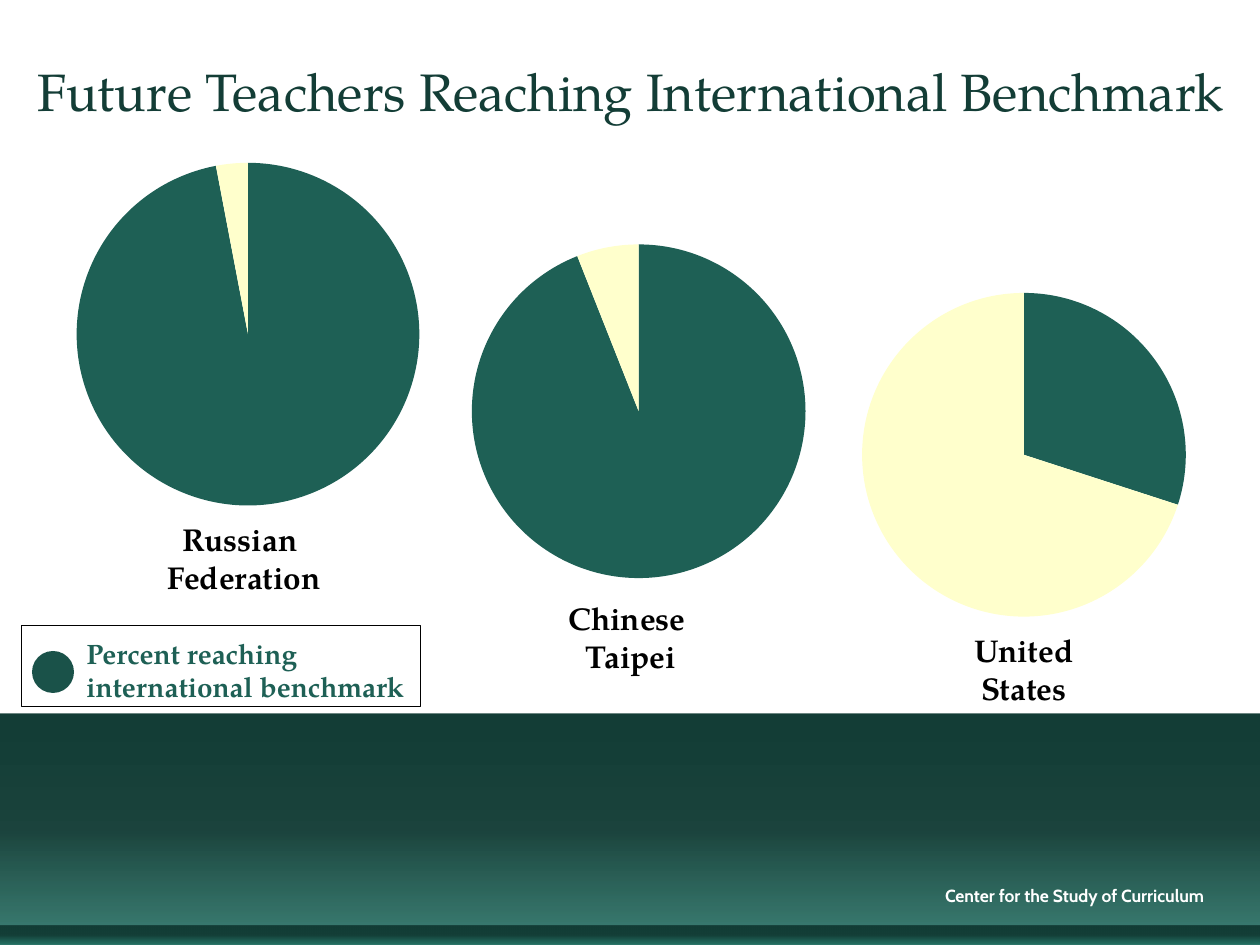
from lxml import etree
from pptx import Presentation
from pptx.chart.data import CategoryChartData
from pptx.dml.color import RGBColor
from pptx.enum.chart import XL_CHART_TYPE as ChartType
from pptx.enum.shapes import MSO_SHAPE as Shape
from pptx.enum.text import PP_ALIGN as Align
from pptx.oxml import parse_xml
from pptx.util import Emu, Pt

SCALE = 914400 / 126
SERIF = "TeX Gyre Pagella"
DRAWING_NS = "http://schemas.openxmlformats.org/drawingml/2006/main"
CHART_NS = "http://schemas.openxmlformats.org/drawingml/2006/chart"
COLORS = {
    "dark": "133D36",
    "light": "237164",
    "reached": "1E6055",
    "not_reached": "FFFFCC",
    "marker": "1A5249",
    "black": "000000",
    "white": "FFFFFF",
}


def px(*lengths):
    return [Emu(round(length * SCALE)) for length in lengths]


def add_text(box, text, color, size, font=SERIF, bold=True, align=Align.CENTER):
    """Add a wrapped text box; newlines in text start paragraphs, \\v breaks a line."""
    frame = slide.shapes.add_textbox(*px(*box)).text_frame
    frame.word_wrap = True
    frame.text = text
    style = {"name": font, "size": Pt(size), "bold": bold}
    for paragraph in frame.paragraphs:
        paragraph.alignment = align
        for run in paragraph.runs:
            for name, value in style.items():
                setattr(run.font, name, value)
            run.font.color.rgb = RGBColor.from_string(COLORS[color])


presentation = Presentation()
presentation.slide_width, presentation.slide_height = px(1260, 945)
slide = presentation.slides.add_slide(presentation.slide_layouts[6])

# Footer band and the strip along its lower edge
gradient_stops = [(0, "dark", 100), (50, "dark", 96), (100, "light", 87)]
stops_xml = "".join(
    f'<a:gs pos="{position * 1000}"><a:srgbClr val="{COLORS[color]}">'
    f'<a:alpha val="{opacity * 1000}"/></a:srgbClr></a:gs>'
    for position, color, opacity in gradient_stops
)
for top, height in [(714, 231), (926, 19)]:
    band = slide.shapes.add_shape(Shape.RECTANGLE, *px(0, top, 1260, height))
    band.shadow.inherit = False
    band.line.fill.background()
    band.fill.gradient()
    gradient = band.fill._xPr.find(f"{{{DRAWING_NS}}}gradFill")
    gradient.getparent().replace(gradient, parse_xml(
        f'<a:gradFill xmlns:a="{DRAWING_NS}" rotWithShape="1">'
        f'<a:gsLst>{stops_xml}</a:gsLst><a:lin ang="5400000" scaled="0"/></a:gradFill>'
    ))

add_text((913, 879, 323, 34), "Center for the Study of Curriculum", "white", 10, "Cabin")
add_text((1, 53, 1260, 77), "Future Teachers Reaching International Benchmark",
         "dark", 30, bold=False)

# One pie per country: share reaching the benchmark, chart box, label, label position
countries = [
    (97, (-63, 147, 567, 378), "Russian \vFederation", (60, 514)),
    (94, (336, 229, 552, 368), "Chinese \vTaipei", (447, 593)),
    (30, (730, 278, 536, 357), "United\nStates", (840, 625)),
]
plot_layout = {"x": 0.246, "y": 0.042, "w": 0.605, "h": 0.907}
for share, chart_box, label, label_position in countries:
    data = CategoryChartData()
    data.categories = ["1", "2"]
    data.add_series("Series 1", (share, 100 - share))
    chart = slide.shapes.add_chart(ChartType.PIE, *px(*chart_box), data).chart
    chart.has_legend = False
    chart.has_title = False
    chart.font.name = "Calibri"
    chart.font.size = Pt(18)
    chart.font.color.rgb = RGBColor.from_string(COLORS["black"])

    pie = chart.plots[0]
    pie.vary_by_categories = True
    for index, color in enumerate(["reached", "not_reached"]):
        slice_format = pie.series[0].points[index].format
        slice_format.fill.solid()
        slice_format.fill.fore_color.rgb = RGBColor.from_string(COLORS[color])
        slice_format.line.fill.background()

    plot_area = chart._chartSpace.find(f".//{{{CHART_NS}}}plotArea")
    for layout in plot_area.findall(f"{{{CHART_NS}}}layout"):
        plot_area.remove(layout)
    layout = etree.Element(f"{{{CHART_NS}}}layout")
    manual = etree.SubElement(layout, f"{{{CHART_NS}}}manualLayout")
    settings = {"layoutTarget": "inner", "xMode": "edge", "yMode": "edge", **plot_layout}
    for name, value in settings.items():
        etree.SubElement(manual, f"{{{CHART_NS}}}{name}", val=str(value))
    plot_area.insert(0, layout)

    add_text((*label_position, 368, 89), label, "black", 18)

# Legend
add_text((74, 630, 359, 81), "Percent reaching international benchmark",
         "reached", 16, align=Align.LEFT)
marker = slide.shapes.add_shape(Shape.OVAL, *px(32, 651, 42, 42))
marker.shadow.inherit = False
marker.fill.solid()
marker.fill.fore_color.rgb = RGBColor.from_string(COLORS["marker"])
marker.line.fill.background()

frame = slide.shapes.add_shape(Shape.RECTANGLE, *px(21, 625, 399, 81))
frame.shadow.inherit = False
frame.fill.background()
frame.line.color.rgb = RGBColor.from_string(COLORS["black"])
frame.line.width = Pt(0.25)

presentation.save("out.pptx")
